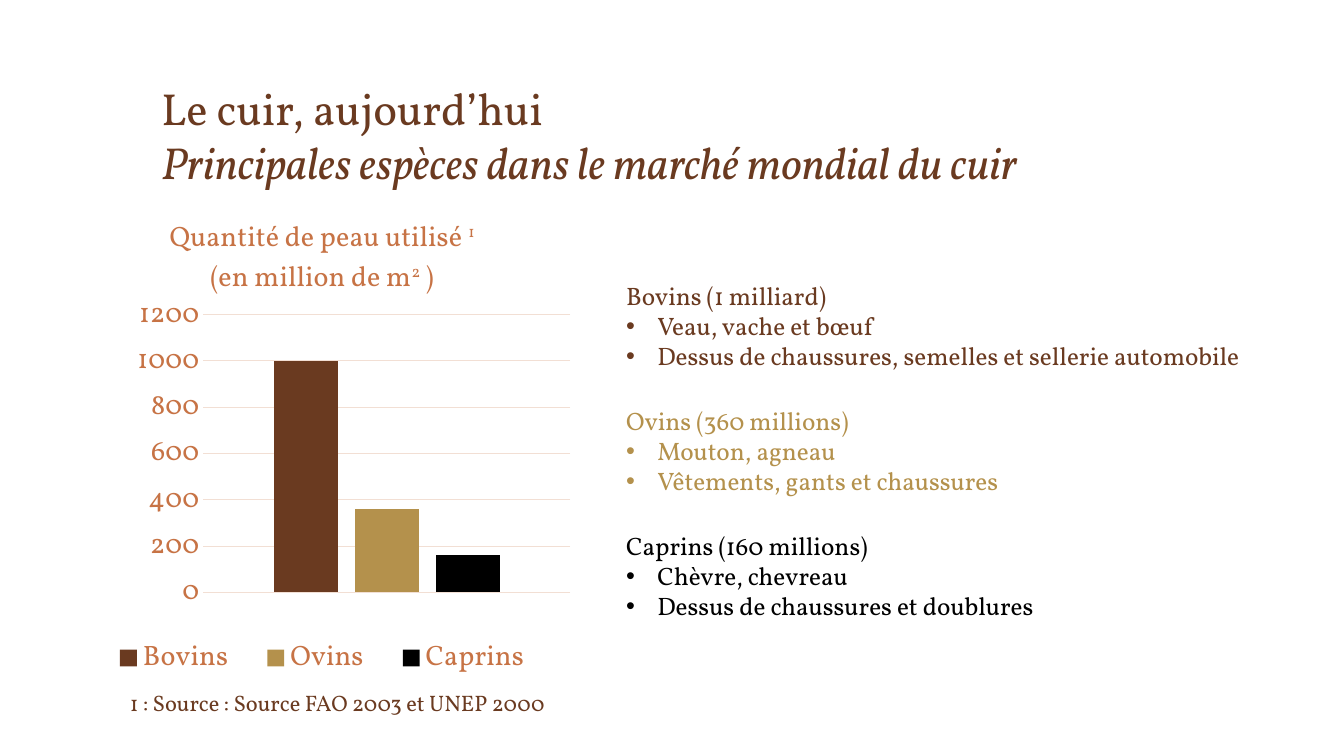
from lxml import etree
from pptx import Presentation
from pptx import util as u
from pptx.chart.data import CategoryChartData
from pptx.dml.color import RGBColor
from pptx.enum import chart as charts, text
from pptx.oxml import parse_xml
from pptx.oxml.ns import nsdecls, qn

FONT = "Vollkorn"
BROWN, GOLD, BLACK = "6A3A20", "B4914C", "000000"
COPPER, GRID = "C77345", "F2DFD4"

SPECIES = [
    ("Bovins", 1000, "1 milliard", BROWN,
     ["Veau, vache et bœuf", "Dessus de chaussures, semelles et sellerie automobile"]),
    ("Ovins", 360, "360 millions", GOLD,
     ["Mouton, agneau", "Vêtements, gants et chaussures"]),
    ("Caprins", 160, "160 millions", BLACK,
     ["Chèvre, chevreau", "Dessus de chaussures et doublures"]),
]


def color(value):
    return RGBColor.from_string(value)


def style(font, size, shade, **extra):
    values = {"name": FONT, "size": u.Pt(size), "bold": False, **extra}
    for name, value in values.items():
        setattr(font, name, value)
    font.color.rgb = color(shade)


def add_run(paragraph, words, size, shade, raised=False, **extra):
    run = paragraph.add_run()
    run.text = words
    style(run.font, size, shade, **extra)
    if raised:
        run.font._element.set("baseline", "30000")


def place(shape, left, top, width, height):
    box = {"left": left, "top": top, "width": width, "height": height}
    for name, value in box.items():
        setattr(shape, name, u.Inches(value))


def set_frame(frame, anchor, auto_size=text.MSO_AUTO_SIZE.NONE):
    values = {"word_wrap": True, "auto_size": auto_size, "vertical_anchor": anchor}
    for name, value in values.items():
        setattr(frame, name, value)


def set_bullet(paragraph, indent):
    """Hanging bullet, or a flush line when the indent is zero."""
    props = paragraph._p.get_or_add_pPr()
    props.set("marL", str(u.Inches(indent)))
    props.set("indent", str(-u.Inches(indent)))
    if indent:
        etree.SubElement(props, qn("a:buFont")).set("typeface", "Arial")
        etree.SubElement(props, qn("a:buChar")).set("char", "•")
    else:
        etree.SubElement(props, qn("a:buNone"))


def fill_title(title):
    place(title, 1.5, 0.64, 10.66, 1.28)
    set_frame(title.text_frame, text.MSO_ANCHOR.BOTTOM)
    heading = title.text_frame.paragraphs[0]
    heading.alignment = text.PP_ALIGN.LEFT
    add_run(heading, "Le cuir, aujourd’hui", 32, BROWN)
    heading.add_line_break()
    add_run(heading, "Principales espèces dans le marché mondial du cuir", 32, BROWN, italic=True)


def fill_species(body, top, heading, uses, shade):
    place(body, 6.11, top, 6.3, 1.01)
    frame = body.text_frame
    set_frame(frame, text.MSO_ANCHOR.TOP, text.MSO_AUTO_SIZE.SHAPE_TO_FIT_TEXT)
    for i, line in enumerate([heading, *uses]):
        paragraph = frame.add_paragraph() if i else frame.paragraphs[0]
        set_bullet(paragraph, 0.31 if i else 0)
        paragraph.space_before = u.Pt(0)
        add_run(paragraph, line, 18, shade)


def set_layout(parent, index, x, y, w, h, inner=False):
    for old in parent.findall(qn("c:layout")):
        parent.remove(old)
    target = '<c:layoutTarget val="inner"/>' if inner else ""
    parent.insert(index, parse_xml(
        f'<c:layout {nsdecls("c")}><c:manualLayout>{target}'
        '<c:xMode val="edge"/><c:yMode val="edge"/>'
        f'<c:x val="{x}"/><c:y val="{y}"/><c:w val="{w}"/><c:h val="{h}"/>'
        '</c:manualLayout></c:layout>'))


def add_hides_chart(slide):
    data = CategoryChartData()
    data.categories = ["1"]
    for name, amount, *_ in SPECIES:
        data.add_series(name, [amount])
    area = [u.Inches(n) for n in (0.52, 1.97, 5.35, 5.01)]
    chart = slide.shapes.add_chart(
        charts.XL_CHART_TYPE.COLUMN_CLUSTERED, *area, data).chart
    style(chart.font, 10, BROWN)

    # Title with raised figures
    chart.has_title = True
    caption = chart.chart_title.text_frame
    lines = [[("Quantité de peau utilisé ", False), ("1", True)],
             [("(en million de m", False), ("2", True), (" )", False)]]
    for i, parts in enumerate(lines):
        paragraph = caption.add_paragraph() if i else caption.paragraphs[0]
        for words, raised in parts:
            add_run(paragraph, words, 20, COPPER, raised)
    chart.chart_title.include_in_layout = False

    # Columns
    plot = chart.plots[0]
    plot.gap_width, plot.overlap, plot.vary_by_categories = 219, -27, False
    for series, (_, _, _, shade, _) in zip(plot.series, SPECIES):
        series.format.fill.solid()
        series.format.fill.fore_color.rgb = color(shade)

    # Axes
    chart.category_axis.visible = False
    amounts = chart.value_axis
    values = {"minimum_scale": 0, "maximum_scale": 1200, "major_unit": 200,
              "major_tick_mark": charts.XL_TICK_MARK.NONE,
              "has_major_gridlines": True}
    for name, value in values.items():
        setattr(amounts, name, value)
    amounts.format.line.fill.background()
    grid = amounts.major_gridlines.format.line
    grid.color.rgb, grid.width = color(GRID), u.Pt(0.75)
    style(amounts.tick_labels.font, 20, COPPER)

    # Legend and layout
    chart.has_legend = True
    chart.legend.position = charts.XL_LEGEND_POSITION.BOTTOM
    chart.legend.include_in_layout = False
    style(chart.legend.font, 20, COPPER)
    set_layout(chart.element.xpath(".//c:plotArea")[0], 0, 0.28, 0.23, 0.68, 0.55, inner=True)
    set_layout(chart.element.xpath(".//c:legend")[0], 1, 0.07, 0.86, 0.86, 0.1)


def add_source(slide):
    source = slide.shapes.add_textbox(*[u.Inches(n) for n in (1.19, 6.79, 4.33, 0.37)])
    set_frame(source.text_frame, text.MSO_ANCHOR.TOP)
    paragraph = source.text_frame.paragraphs[0]
    add_run(paragraph, "1 : Source : Source FAO 2003 et UNEP 2000", 16, BROWN)


def main():
    deck = Presentation()
    deck.slide_width, deck.slide_height = u.Inches(13.33), u.Inches(7.5)
    slide = deck.slides.add_slide(deck.slide_layouts.get_by_name("Comparison"))
    title, *bodies = slide.placeholders

    fill_title(title)
    add_hides_chart(slide)
    for i, (name, _, total, shade, uses) in enumerate(SPECIES):
        fill_species(bodies[i], 2.73 + i * 1.24, f"{name} ({total})", uses, shade)
    add_source(slide)

    # Unused placeholder
    for spare in bodies[len(SPECIES):]:
        spare.element.getparent().remove(spare.element)
    deck.save("out.pptx")


if __name__ == "__main__":
    main()
